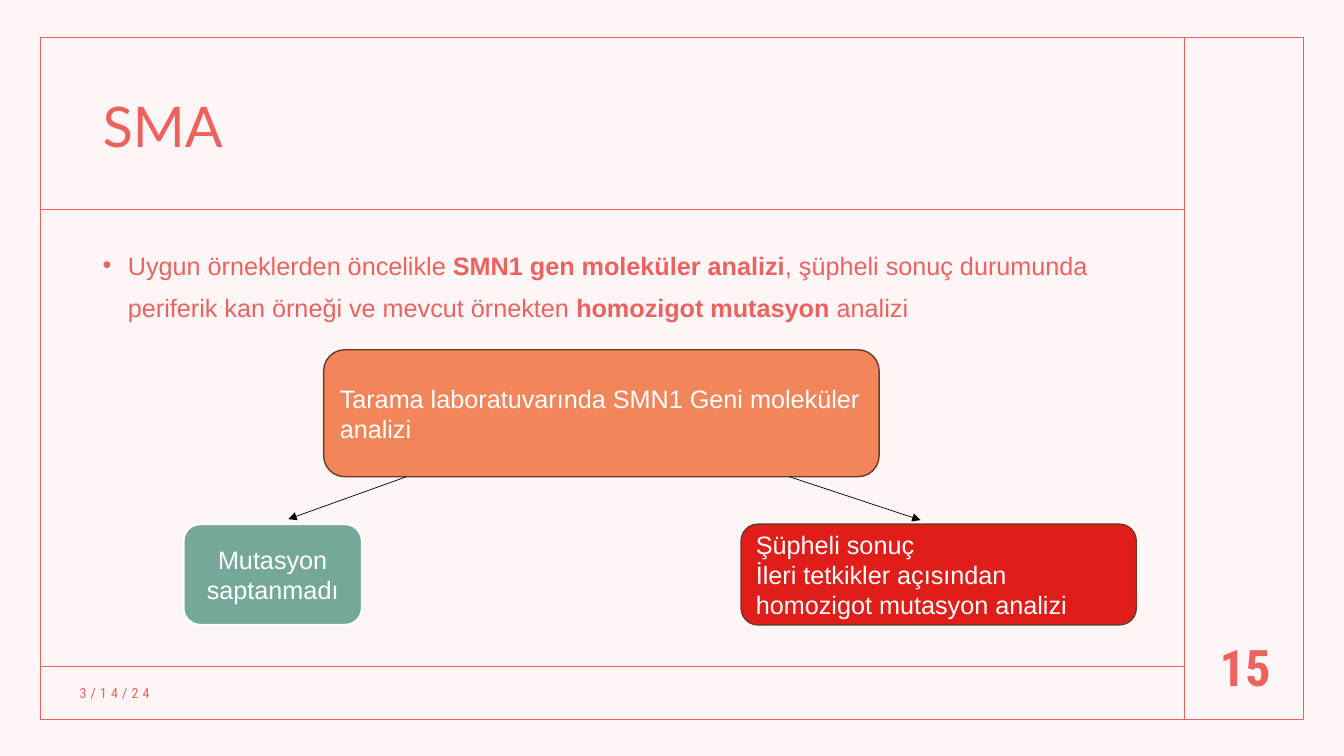
from pptx import Presentation
from pptx.dml.color import RGBColor
from pptx.enum.shapes import MSO_CONNECTOR as CONN, MSO_SHAPE as SHAPE
from pptx.enum.text import MSO_ANCHOR as ANCHOR, PP_ALIGN as ALIGN
from pptx.oxml.ns import qn
from pptx.util import Inches, Pt
from lxml.etree import SubElement

CORAL = RGBColor(0xED, 0x62, 0x5F)
BLUSH = RGBColor(0xFE, 0xF6, 0xF6)
ORANGE = RGBColor(0xF2, 0x85, 0x5A)
GREEN = RGBColor(0x76, 0xA8, 0x99)
RED = RGBColor(0xE0, 0x1D, 0x19)
BROWN = RGBColor(0x6A, 0x3A, 0x27)
WHITE = RGBColor(0xFF, 0xFF, 0xFF)
BLACK = RGBColor(0x00, 0x00, 0x00)

TITLE = {"name": "Lato", "size": Pt(40)}
BODY = {"name": "Arial", "size": Pt(18)}
DATE = {"name": "Roboto Condensed", "size": Pt(10)}
NUMBER = {"name": "Roboto Condensed", "size": Pt(36), "bold": True}


def set_attrs(obj, values):
    for name, value in values.items():
        setattr(obj, name, value)


def add_run(p, text, font, color):
    r = p.add_run()
    r.text = text
    set_attrs(r.font, font)
    r.font.color.rgb = color
    return r


def set_line(sp, color, width):
    sp.line.color.rgb = color
    sp.line.width = Pt(width)


def add_text(slide, box, runs, font, anchor=ANCHOR.MIDDLE, **para):
    """Add a one-paragraph text box; runs are (text, extra font values) pairs."""
    tf = slide.shapes.add_textbox(*map(Inches, box)).text_frame
    set_attrs(tf, {"word_wrap": True, "vertical_anchor": anchor})
    p = tf.paragraphs[0]
    set_attrs(p, para)
    for text, extra in runs:
        add_run(p, text, {**font, **extra}, CORAL)
    return p


def add_bullet(p, indent):
    pPr = p._p.get_or_add_pPr()
    pPr.set("marL", str(Inches(indent)))
    pPr.set("indent", str(-Inches(indent)))
    SubElement(pPr, qn("a:buFont")).set("typeface", "Arial")
    SubElement(pPr, qn("a:buChar")).set("char", "•")


def add_line(slide, start, end, color=CORAL, width=1, arrow=False):
    ends = map(Inches, (*start, *end))
    line = slide.shapes.add_connector(CONN.STRAIGHT, *ends)
    set_line(line, color, width)
    if arrow:
        SubElement(line.line._get_or_add_ln(), qn("a:tailEnd")).set("type", "triangle")
    SubElement(line._element.spPr, qn("a:effectLst"))


def add_frame(slide):
    sp = slide.shapes.add_shape(SHAPE.RECTANGLE, *map(Inches, (0.4, 0.37, 12.53, 6.77)))
    sp.shadow.inherit = False
    sp.fill.background()
    set_line(sp, CORAL, 1)
    add_line(slide, (11.75, 0.37), (11.75, 7.13))
    for y in (6.61, 2.08):
        add_line(slide, (0.41, y), (11.75, y))


def add_step(slide, box, lines, fill, border, width=1, align=ALIGN.LEFT):
    sp = slide.shapes.add_shape(SHAPE.ROUNDED_RECTANGLE, *map(Inches, box))
    sp.shadow.inherit = False
    sp.fill.solid()
    sp.fill.fore_color.rgb = fill
    set_line(sp, border, width)
    tf = sp.text_frame
    set_attrs(tf, {"word_wrap": True, "vertical_anchor": ANCHOR.MIDDLE})
    for i, text in enumerate(lines):
        p = tf.add_paragraph() if i else tf.paragraphs[0]
        p.alignment = align
        add_run(p, text, BODY, WHITE)


def main():
    prs = Presentation()
    set_attrs(prs, {"slide_width": Inches(13.33), "slide_height": Inches(7.5)})
    slide = prs.slides.add_slide(prs.slide_layouts[6])
    slide.background.fill.solid()
    slide.background.fill.fore_color.rgb = BLUSH
    add_frame(slide)

    add_text(slide, (0.92, 0.6, 10.42, 1.36), [("SMA", {})], TITLE, line_spacing=0.9)
    bold = {"bold": True}
    body = add_text(slide, (0.92, 2.31, 10.42, 3.99), [
        ("Uygun örneklerden öncelikle ", {}),
        ("SMN1 gen moleküler analizi", bold),
        (", şüpheli sonuç durumunda periferik kan örneği ve mevcut örnekten ", {}),
        ("homozigot mutasyon", bold),
        (" analizi", {}),
    ], BODY, ANCHOR.TOP, line_spacing=1.4, space_before=Pt(10))
    add_bullet(body, 0.25)

    date = add_text(slide, (0.69, 6.72, 3.45, 0.31), [("3/14/24", {})], DATE)
    date.runs[0]._r.get_or_add_rPr().set("spc", "300")
    add_text(slide, (11.83, 6.2, 1.04, 0.83), [("15", {})], NUMBER, alignment=ALIGN.CENTER)

    add_step(slide, (3.21, 3.47, 5.51, 1.26),
             ["Tarama laboratuvarında SMN1 Geni moleküler analizi"], ORANGE, BROWN)
    for start, end in (((4.03, 4.73), (2.86, 5.15)), ((7.83, 4.73), (9.13, 5.16))):
        add_line(slide, start, end, BLACK, 0.5, arrow=True)
    add_step(slide, (1.82, 5.2, 1.77, 1), ["Mutasyon saptanmadı"],
             GREEN, WHITE, 1.5, ALIGN.CENTER)
    add_step(slide, (7.35, 5.2, 3.92, 1),
             ["Şüpheli sonuç", "İleri tetkikler açısından homozigot mutasyon analizi"],
             RED, BROWN)
    prs.save("out.pptx")


if __name__ == "__main__":
    main()
